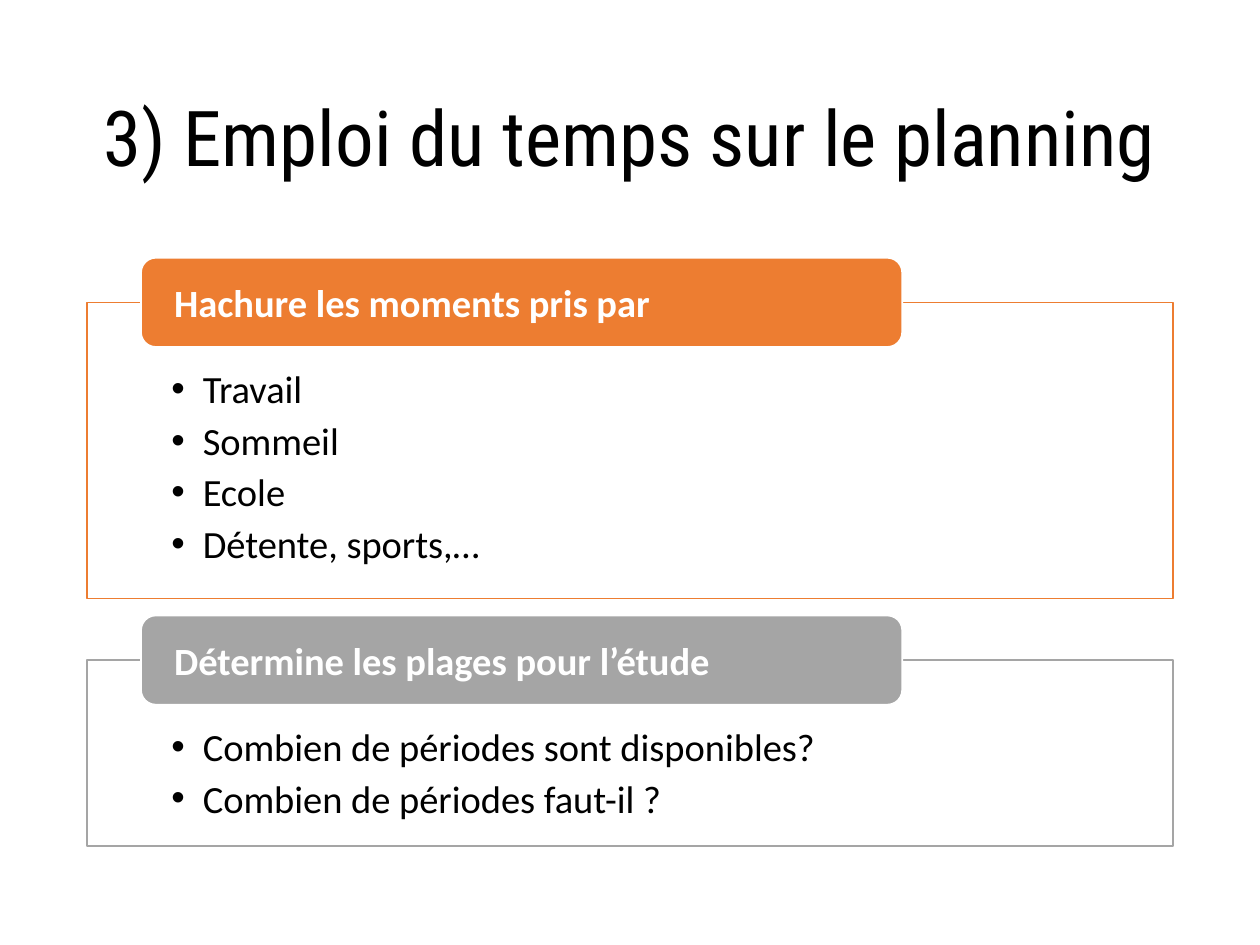
from dataclasses import dataclass

from lxml.etree import SubElement
from pptx import Presentation
from pptx.dml.color import RGBColor
from pptx.enum.shapes import MSO_SHAPE
from pptx.enum.text import MSO_ANCHOR, MSO_AUTO_SIZE, PP_ALIGN
from pptx.oxml.ns import qn
from pptx.util import Pt


@dataclass(frozen=True)
class Theme:
    """Colours, fonts, type sizes and shared measures, with lengths in points."""
    black: RGBColor = RGBColor(0x00, 0x00, 0x00)
    white: RGBColor = RGBColor(0xFF, 0xFF, 0xFF)
    orange: RGBColor = RGBColor(0xED, 0x7D, 0x31)
    grey: RGBColor = RGBColor(0xA5, 0xA5, 0xA5)
    title_font: str = "Roboto Condensed"
    body_font: str = "Calibri"
    title_size: float = 44
    body_size: float = 22
    left: float = 49.7
    width: float = 620.6
    header_left: float = 80.6
    header_width: float = 435
    header_height: float = 51


THEME = Theme()


def place(shape, left, top, width, height):
    """Move and size a shape in points."""
    shape.left, shape.top = Pt(left), Pt(top)
    shape.width, shape.height = Pt(width), Pt(height)


def paint(shape, fill, line):
    """Give a shape a solid fill and a thin line."""
    shape.fill.solid()
    shape.fill.fore_color.rgb = fill
    shape.line.color.rgb = line
    shape.line.width = Pt(1)


def set_margins(frame, left, top, right, bottom):
    """Set the text insets in points."""
    frame.margin_left, frame.margin_top = Pt(left), Pt(top)
    frame.margin_right, frame.margin_bottom = Pt(right), Pt(bottom)


def style(para, name, size, color, bold=False):
    """Set the font of a whole paragraph."""
    para.font.name = name
    para.font.size = Pt(size)
    para.font.color.rgb = color
    para.font.bold = bold


def add_bullet(para):
    """Give a paragraph a hanging round bullet."""
    properties = para._p.get_or_add_pPr()
    properties.set("marL", str(Pt(18)))
    properties.set("indent", str(-Pt(18)))
    SubElement(properties, qn("a:buChar")).set("char", "•")


def fill_title(title, text):
    """Place and format the slide title."""
    place(title, THEME.left, 28.8, THEME.width, 104.4)
    frame = title.text_frame
    frame.text = text
    frame.auto_size = MSO_AUTO_SIZE.NONE
    frame.vertical_anchor = MSO_ANCHOR.MIDDLE
    para = frame.paragraphs[0]
    para.alignment = PP_ALIGN.CENTER
    para.line_spacing = 0.9
    style(para, THEME.title_font, THEME.title_size, THEME.black)


def fill_panel(panel, top, height, color, items):
    """Turn a body placeholder into an outlined panel with a bulleted list."""
    place(panel, THEME.left, top, THEME.width, height)
    paint(panel, THEME.white, color)
    frame = panel.text_frame
    frame.text = "\n".join(items)
    frame.auto_size = MSO_AUTO_SIZE.NONE
    frame.vertical_anchor = MSO_ANCHOR.TOP
    set_margins(frame, 48.2, 36, 48.2, 12.2)
    for para in frame.paragraphs:
        para.level = 1
        para.space_before = Pt(0)
        para.space_after = Pt(3)
        style(para, THEME.body_font, THEME.body_size, THEME.black)
        add_bullet(para)


def add_header(page, panel_top, color, text):
    """Add a rounded header centred on the top edge of a panel."""
    header = page.shapes.add_shape(
        MSO_SHAPE.ROUNDED_RECTANGLE,
        Pt(THEME.header_left), Pt(panel_top - THEME.header_height / 2),
        Pt(THEME.header_width), Pt(THEME.header_height))
    header.shadow.inherit = False
    paint(header, color, THEME.white)
    frame = header.text_frame
    frame.text = text
    frame.word_wrap = True
    frame.vertical_anchor = MSO_ANCHOR.MIDDLE
    set_margins(frame, 16.5, 0, 16.5, 0)
    para = frame.paragraphs[0]
    para.alignment = PP_ALIGN.LEFT
    style(para, THEME.body_font, THEME.body_size, THEME.white, bold=True)


def main():
    """Build the planning slide and save it."""
    deck = Presentation()
    deck.slide_width, deck.slide_height = Pt(720), Pt(540)
    page = deck.slides.add_slide(deck.slide_layouts.get_by_name("Two Content"))
    fill_title(page.shapes.title, "3) Emploi du temps sur le planning")
    sections = [
        (172.8, 169.2, THEME.orange, "Hachure les moments pris par",
         ["Travail", "Sommeil", "Ecole", "Détente, sports,…"]),
        (377.2, 106.4, THEME.grey, "Détermine les plages pour l’étude",
         ["Combien de périodes sont disponibles?",
          "Combien de périodes faut-il ?"]),
    ]
    panels = list(page.placeholders)[1:]
    for panel, (top, height, color, heading, items) in zip(panels, sections):
        fill_panel(panel, top, height, color, items)
        add_header(page, top, color, heading)
    deck.save("out.pptx")


if __name__ == "__main__":
    main()
